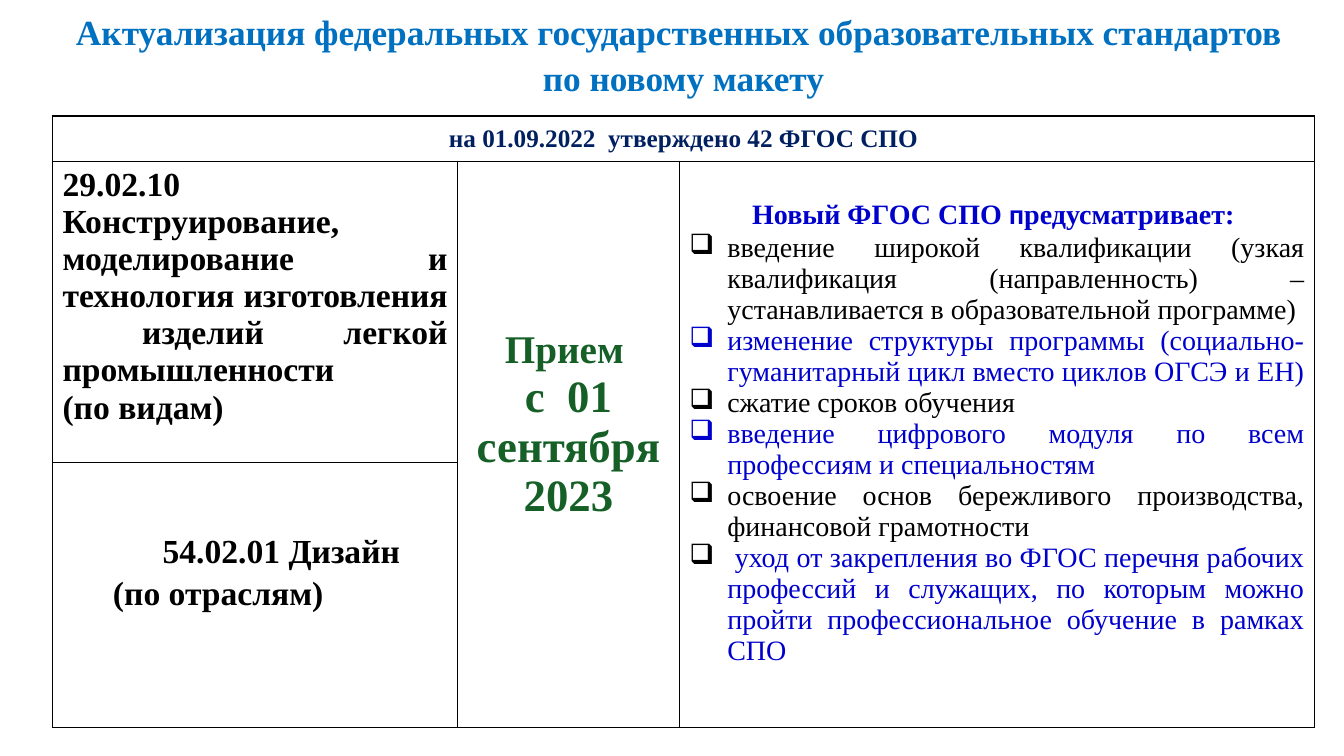
from lxml import etree
from pptx import Presentation
from pptx.dml.color import RGBColor
from pptx.enum.text import MSO_ANCHOR, PP_ALIGN
from pptx.oxml.ns import qn
from pptx.util import Pt

CENTER, JUSTIFY, LEFT = PP_ALIGN.CENTER, PP_ALIGN.JUSTIFY, PP_ALIGN.LEFT
TOP, MIDDLE = MSO_ANCHOR.TOP, MSO_ANCHOR.MIDDLE
SERIF, SANS = "Times New Roman", "Calibri"
BLACK, WHITE, SKY, NAVY = "000000", "FFFFFF", "0070C0", "002060"
GREEN, BLUE = "166028", "0000CC"


def color(value):
    return RGBColor.from_string(value)


def span(text, size, ink=BLACK, bold=True, font=SERIF):
    return text, size, ink, bold, font


class SlideBuilder:
    def __init__(self, page):
        self.page = page
        self.border_width = 1

    def fill_text(self, frame, paragraphs, align=LEFT, spacing=1.0, margin=0, indent=0,
                  bullet=None):
        for spans in paragraphs:
            para = frame.paragraphs[0]
            if para.runs:
                para = frame.add_paragraph()
            para.alignment = align
            para.line_spacing = spacing
            self.indent(para, margin, indent, bullet)
            for text, size, ink, bold, font in spans:
                for position, line in enumerate(text.split("\n")):
                    if position:
                        para.add_line_break()
                    run = para.add_run()
                    run.text = line
                    run.font.size = Pt(size)
                    run.font.bold = bold
                    run.font.name = font
                    run.font.color.rgb = color(ink)

    def indent(self, para, margin, indent, bullet):
        properties = para._p.get_or_add_pPr()
        properties.set("marL", str(Pt(margin)))
        properties.set("indent", str(Pt(indent)))
        if bullet:
            etree.SubElement(properties, qn("a:buChar")).set("char", bullet)

    def text(self, left, top, width, height, paragraphs, **style):
        box = self.page.shapes.add_textbox(Pt(left), Pt(top), Pt(width), Pt(height))
        frame = box.text_frame
        frame.word_wrap = True
        frame.vertical_anchor = MIDDLE
        self.fill_text(frame, paragraphs, **style)

    def table(self, left, top, widths, heights):
        frame = self.page.shapes.add_table(
            len(heights), len(widths), Pt(left), Pt(top), Pt(sum(widths)), Pt(sum(heights)))
        table = frame.table
        for column, width in zip(table.columns, widths):
            column.width = Pt(width)
        for row, height in zip(table.rows, heights):
            row.height = Pt(height)
        for cell in table.iter_cells():
            self.border(cell)
            cell.fill.solid()
            cell.fill.fore_color.rgb = color(WHITE)
        return table

    def border(self, cell):
        properties = cell._tc.get_or_add_tcPr()
        for side in ("a:lnL", "a:lnR", "a:lnT", "a:lnB"):
            line = etree.SubElement(properties, qn(side), w=str(Pt(self.border_width)))
            fill = etree.SubElement(line, qn("a:solidFill"))
            etree.SubElement(fill, qn("a:srgbClr"), val=BLACK)

    def cell(self, cell, paragraphs, anchor=TOP, margin_top=3.6, margin_bottom=3.6, **style):
        cell.vertical_anchor = anchor
        cell.margin_top = Pt(margin_top)
        cell.margin_bottom = Pt(margin_bottom)
        self.fill_text(cell.text_frame, paragraphs, **style)


def main():
    deck = Presentation()
    deck.slide_width, deck.slide_height = Pt(960), Pt(540)
    builder = SlideBuilder(deck.slides.add_slide(deck.slide_layouts[6]))

    title = ("Актуализация федеральных государственных образовательных стандартов \n"
             "по новому макету")
    builder.text(37.5, 15, 901.4, 45.4, [[span(title, 25.2, SKY)]], align=CENTER, spacing=1.08)

    table = builder.table(37.5, 82.8, [289.4, 158.4, 453.6], [32.4, 215.3, 189.2])
    table.cell(0, 0).merge(table.cell(0, 2))
    for column in (1, 2):
        table.cell(1, column).merge(table.cell(2, column))

    builder.cell(table.cell(0, 0), [[span("на 01.09.2022  утверждено 42 ФГОС СПО", 18, NAVY)]],
                 anchor=MIDDLE, align=CENTER)

    specialty = ("29.02.10 Конструирование, моделирование и технология изготовления "
                 " изделий легкой промышленности ")
    builder.cell(table.cell(1, 0), [[span(specialty, 24)], [span("(по видам) ", 24)]],
                 align=JUSTIFY)

    builder.cell(table.cell(2, 0), [[span("54.02.01 Дизайн (по отраслям)", 24)]],
                 anchor=MIDDLE, margin_bottom=39, spacing=1.15, margin=36, indent=35.4)

    admission = [[span("Прием", 28, GREEN), span(" ", 24, GREEN)]]
    admission += [[span(line, 32, GREEN)] for line in ("с  01", "сентября", "2023")]
    builder.cell(table.cell(1, 1), admission, anchor=MIDDLE, margin_bottom=31, align=CENTER)

    heading = [span("Новый ФГОС СПО ", 20, BLUE), span("п", 20, BLUE, font=SANS),
               span("редусматривает: ", 20, BLUE)]
    builder.cell(table.cell(1, 2), [heading], margin_top=26, align=CENTER)

    changes = [
        ("введение широкой квалификации (узкая квалификация (направленность) – "
         "устанавливается в образовательной программе) ", BLACK),
        ("изменение структуры программы (социально-гуманитарный цикл вместо "
         "циклов ОГСЭ и ЕН) ", BLUE),
        ("сжатие сроков обучения ", BLACK),
        ("введение цифрового модуля по всем профессиям и специальностям", BLUE),
        ("освоение основ бережливого производства, финансовой грамотности", BLACK),
        ("уход от закрепления во ФГОС перечня рабочих профессий и служащих, по которым "
         "можно пройти профессиональное обучение в рамках СПО", BLUE),
    ]
    bullets = [[span(text, 20, ink, False)] for text, ink in changes]
    bullets[-1].insert(0, span(" ", 20, BLACK, False))
    builder.fill_text(table.cell(1, 2).text_frame, bullets, align=JUSTIFY,
                      margin=27, indent=-27, bullet="❑")

    deck.save("out.pptx")


if __name__ == "__main__":
    main()
